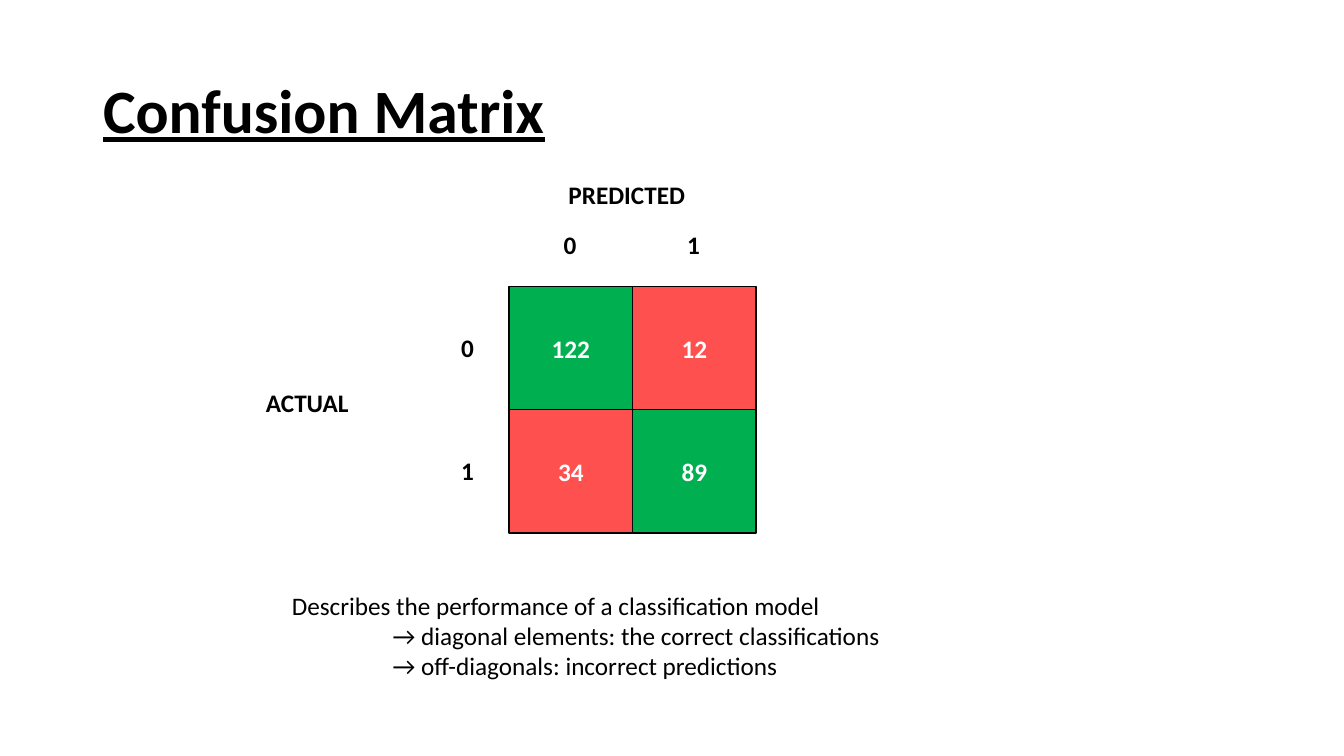
from pptx import Presentation
from pptx.dml.color import RGBColor
from pptx.enum.shapes import MSO_SHAPE
from pptx.enum.text import MSO_ANCHOR, MSO_AUTO_SIZE, PP_ALIGN
from pptx.oxml import parse_xml
from pptx.oxml.ns import nsdecls
from pptx.util import Inches, Pt

RECT = MSO_SHAPE.RECTANGLE
MIDDLE = MSO_ANCHOR.MIDDLE
NO_FIT = MSO_AUTO_SIZE.NONE
LEFT, CENTER = PP_ALIGN.LEFT, PP_ALIGN.CENTER

BLACK = RGBColor(0x00, 0x00, 0x00)
WHITE = RGBColor(0xFF, 0xFF, 0xFF)
GREEN = RGBColor(0x00, 0xB0, 0x50)
RED = RGBColor(0xFF, 0x50, 0x50)

COUNTS = [[122, 12], [34, 89]]
NOTES = [
    "Describes the performance of a classification model",
    "\t→ diagonal elements: the correct classifications",
    "\t→ off-diagonals: incorrect predictions",
]


class MatrixSlide:
    """Places elements in columns and rows counted from the matrix's top left corner."""

    FONT = "Calibri"
    ORIGIN_X, ORIGIN_Y, CELL = 5.05, 2.84, 1.225

    def __init__(self, prs):
        self.s = prs.slides.add_slide(prs.slide_layouts[5])

    def box(self, col, row, cols, rows):
        return (Inches(self.ORIGIN_X + col * self.CELL),
                Inches(self.ORIGIN_Y + row * self.CELL),
                Inches(cols * self.CELL), Inches(rows * self.CELL))

    def style(self, p, size=18, color=BLACK, bold=True, align=LEFT):
        p.alignment = align
        font = p.font
        font.name, font.size, font.bold = self.FONT, Pt(size), bold
        font.color.rgb = color

    def title(self, text, col, row, cols, rows):
        sp = self.s.shapes.title
        sp.left, sp.top, sp.width, sp.height = self.box(col, row, cols, rows)
        tf = sp.text_frame
        tf.text = text
        tf.auto_size = NO_FIT
        tf.vertical_anchor = MIDDLE
        p = tf.paragraphs[0]
        self.style(p, size=44)
        p.font.underline = True
        p.line_spacing = 0.9

    def cell(self, count, col, row):
        sp = self.s.shapes.add_shape(RECT, *self.box(col, row, 1, 1))
        sp.shadow.inherit = False
        sp.fill.solid()
        sp.fill.fore_color.rgb = GREEN if col == row else RED
        sp.line.color.rgb = BLACK
        sp.line.width = Pt(1)
        tf = sp.text_frame
        tf.text = str(count)
        tf.vertical_anchor = MIDDLE
        self.style(tf.paragraphs[0], color=WHITE, align=CENTER)

    def text(self, lines, col, row, cols, rows=0.33, bold=True):
        tf = self.s.shapes.add_textbox(*self.box(col, row, cols, rows)).text_frame
        tf.word_wrap = True
        tf.text = "\n".join(lines)
        for p in tf.paragraphs:
            if p.text.startswith("\t"):
                p._p.get_or_add_pPr().append(parse_xml(
                    f'<a:tabLst {nsdecls("a")}><a:tab pos="{Inches(1)}" algn="l"/></a:tabLst>'))
            self.style(p, bold=bold)


def main():
    prs = Presentation()
    prs.slide_width, prs.slide_height = Inches(13.33), Inches(7.5)
    matrix = MatrixSlide(prs)
    matrix.title("Confusion Matrix", -3.37, -1.99, 9.39, 1.18)
    for row, counts in enumerate(COUNTS):
        for col, count in enumerate(counts):
            matrix.cell(count, col, row)
    for i in range(len(COUNTS)):
        matrix.text([str(i)], i + 0.36, -0.5, 0.28)
        matrix.text([str(i)], -0.47, i + 0.33, 0.28)
    matrix.text(["PREDICTED"], 0.4, -0.91, 1.24)
    matrix.text(["ACTUAL"], -2.05, 0.78, 0.94)
    matrix.text(NOTES, -1.84, 2.42, 5.76, 0.82, bold=False)
    prs.save("out.pptx")


if __name__ == "__main__":
    main()
